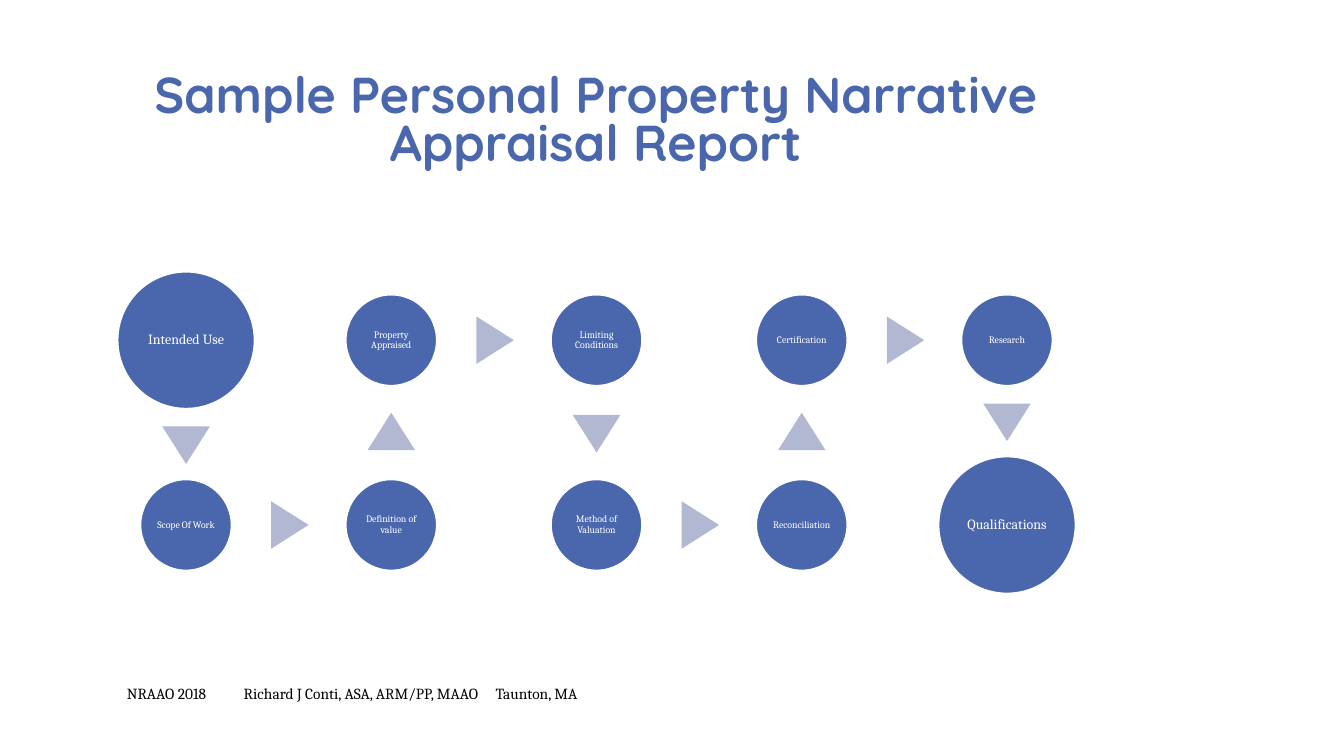
from pptx import Presentation
from pptx.dml.color import RGBColor
from pptx.enum.shapes import MSO_SHAPE as Shape
from pptx.enum.text import MSO_ANCHOR as Anchor, PP_ALIGN as Align
from pptx.oxml.ns import qn
from pptx.util import Pt
from lxml.etree import SubElement

BLUE, PALE, WHITE, BLACK = "4A66AC", "B2B8D2", "FFFFFF", "000000"


def color(value):
    return RGBColor.from_string(value)


def style_text(para, font, size, value, bold=False):
    for span in para.runs:
        span.font.name = font
        span.font.size = Pt(size)
        span.font.bold = bold
        span.font.color.rgb = color(value)


deck = Presentation()
deck.slide_width, deck.slide_height = Pt(960), Pt(540)
page = deck.slides.add_slide(deck.slide_layouts[6])

# Title
title = page.shapes.add_textbox(Pt(83.5), Pt(41.8), Pt(684), Pt(84.2))
frame = title.text_frame
frame.word_wrap = True
frame.vertical_anchor = Anchor.BOTTOM
frame.text = "Sample Personal Property Narrative Appraisal Report"
para = frame.paragraphs[0]
para.alignment = Align.CENTER
para.line_spacing = 0.8
style_text(para, "Quicksand", 36, BLUE, bold=True)

# Report steps in reading order: label, column, row
steps = [
    ("Intended Use", 0, 0),
    ("Scope Of Work", 0, 1),
    ("Definition of value", 1, 1),
    ("Property Appraised", 1, 0),
    ("Limiting Conditions", 2, 0),
    ("Method of Valuation", 2, 1),
    ("Reconciliation", 3, 1),
    ("Certification", 3, 0),
    ("Research", 4, 0),
    ("Qualifications", 4, 1),
]
LEFT, TOP, COLUMN_STEP, ROW_STEP = 132.9, 243, 146.6, 132
ARROW_WIDTH, ARROW_HEIGHT, ARROW_SHIFT = 34, 26.8, 0.8
ROTATION = {(1, 0): 90, (0, 1): 180, (0, -1): 0}

previous = None
for label, column, row in steps:
    # The first and last steps are larger
    is_end = label in (steps[0][0], steps[-1][0])
    radius = 48.8 if is_end else 32.4
    x, y = LEFT + column * COLUMN_STEP, TOP + row * ROW_STEP

    # Triangle in the middle of the gap after the previous circle
    if previous:
        old_column, old_row, old_x, old_y, old_radius = previous
        across, down = column - old_column, row - old_row
        shift = (old_radius - radius) / 2 + ARROW_SHIFT
        middle_x = (old_x + x) / 2 + across * shift
        middle_y = (old_y + y) / 2 + down * shift
        arrow = page.shapes.add_shape(
            Shape.ISOSCELES_TRIANGLE, Pt(middle_x - ARROW_WIDTH / 2),
            Pt(middle_y - ARROW_HEIGHT / 2), Pt(ARROW_WIDTH), Pt(ARROW_HEIGHT))
        arrow.rotation = ROTATION[across, down]
        arrow.shadow.inherit = False
        arrow.fill.solid()
        arrow.fill.fore_color.rgb = color(PALE)
        arrow.line.fill.background()

    # Circle with its label
    circle = page.shapes.add_shape(
        Shape.OVAL, Pt(x - radius), Pt(y - radius), Pt(2 * radius), Pt(2 * radius))
    circle.shadow.inherit = False
    circle.fill.solid()
    circle.fill.fore_color.rgb = color(BLUE)
    circle.line.color.rgb = color(WHITE)
    circle.line.width = Pt(1)
    frame = circle.text_frame
    frame.margin_left = frame.margin_right = Pt(0.7)
    frame.margin_top = frame.margin_bottom = Pt(0.7)
    frame.word_wrap = True
    frame.vertical_anchor = Anchor.MIDDLE
    frame.text = label
    para = frame.paragraphs[0]
    para.alignment = Align.CENTER
    para.line_spacing = 0.9
    style_text(para, "Cambria", 10 if is_end else 7, WHITE)
    previous = column, row, x, y, radius

# Footer, with tab stops between its parts
footer = page.shapes.add_textbox(Pt(83.5), Pt(484.6), Pt(445), Pt(21.6))
frame = footer.text_frame
frame.word_wrap = True
frame.vertical_anchor = Anchor.MIDDLE
frame.text = "NRAAO 2018\tRichard J Conti, ASA, ARM/PP, MAAO\tTaunton, MA"
para = frame.paragraphs[0]
tabs = SubElement(para._p.get_or_add_pPr(), qn("a:tabLst"))
for position in (83.5, 263.5):
    SubElement(tabs, qn("a:tab"), pos=str(Pt(position)), algn="l")
style_text(para, "Cambria", 11, BLACK)

deck.save("out.pptx")
